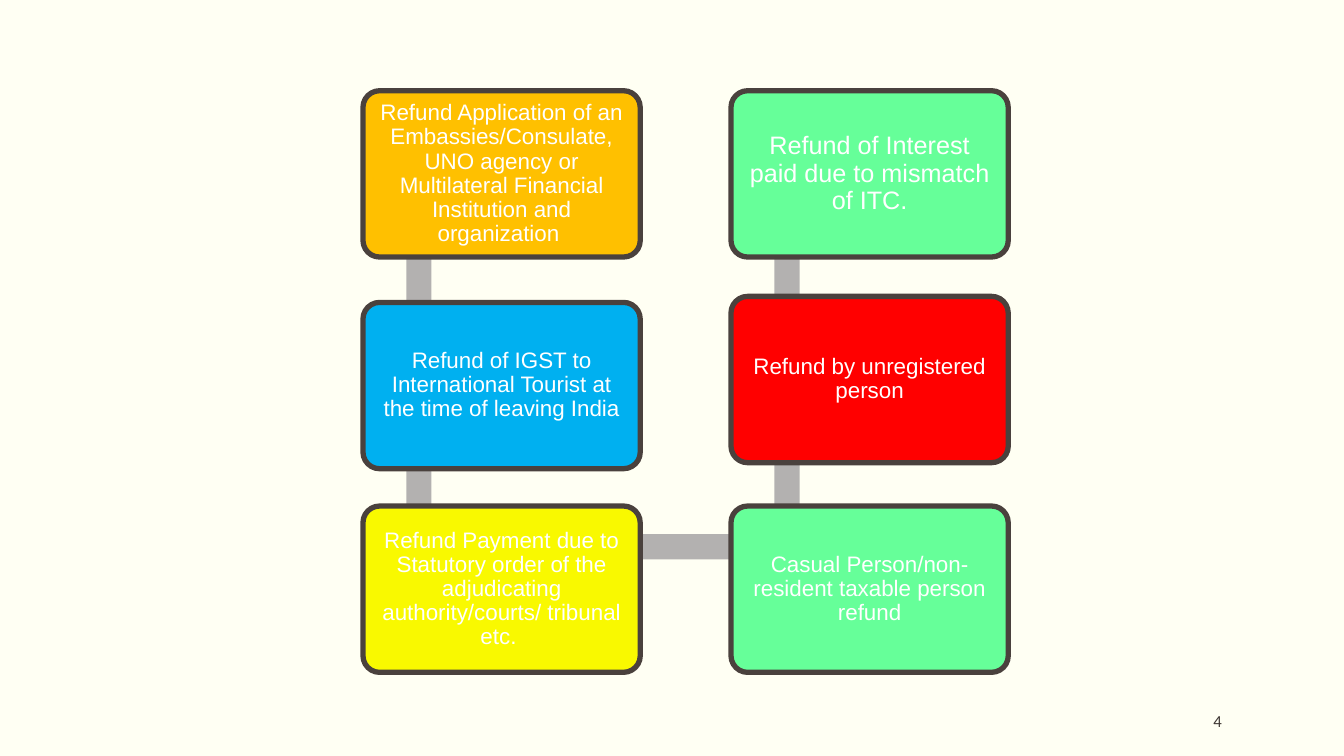
from pptx import Presentation
from pptx.dml.color import RGBColor
from pptx.enum import shapes, text
from pptx.util import Inches, Pt

BOX_WIDTH, BOX_HEIGHT = 2.75, 1.65
BAR_THICKNESS = 0.25
LEFT_COLUMN, RIGHT_COLUMN = 3.6, 7.25

# Refund cases in the order of the chain: left, top, fill, size, wording
REFUNDS = [
    (LEFT_COLUMN, 0.9, "FFC000", 16,
     "Refund Application of an Embassies/Consulate, UNO agency or "
     "Multilateral Financial Institution and organization "),
    (LEFT_COLUMN, 3.0, "00B0F0", 16,
     "Refund of IGST to International Tourist at the time of leaving India"),
    (LEFT_COLUMN, 5.02, "F9F900", 16,
     "Refund Payment due to Statutory order of the adjudicating "
     "authority/courts/ tribunal etc. "),
    (RIGHT_COLUMN, 5.02, "66FF99", 16,
     "Casual Person/non-resident taxable person refund"),
    (RIGHT_COLUMN, 2.94, "FF0000", 16, "Refund by unregistered person"),
    (RIGHT_COLUMN, 0.9, "66FF99", 18,
     "Refund of Interest paid due to mismatch of ITC."),
]


def color(value):
    return RGBColor.from_string(value)


def add_block(slide, kind, left, top, width, height, fill):
    shape = slide.shapes.add_shape(
        kind, Inches(left), Inches(top), Inches(width), Inches(height))
    shape.shadow.inherit = False
    shape.fill.solid()
    shape.fill.fore_color.rgb = color(fill)
    shape.line.fill.background()
    return shape


def write(shape, wording, size, font_name, font_color, alignment, inset_x, inset_y):
    frame = shape.text_frame
    frame.word_wrap = True
    frame.vertical_anchor = text.MSO_ANCHOR.MIDDLE
    frame.margin_left = frame.margin_right = Inches(inset_x)
    frame.margin_top = frame.margin_bottom = Inches(inset_y)
    frame.text = wording
    paragraph = frame.paragraphs[0]
    paragraph.alignment = alignment
    font = paragraph.runs[0].font
    font.size, font.name = Pt(size), font_name
    font.color.rgb = color(font_color)
    return paragraph


def add_bar(slide, start, end):
    """Bar linking two neighbouring boxes, given by their left and top."""
    if start[0] == end[0]:
        top, bottom = sorted((start[1], end[1]))
        area = (start[0] + 0.43, top + 0.41, BAR_THICKNESS, bottom - top)
    else:
        area = (start[0] + 0.55, start[1] + 0.28, end[0] - start[0], BAR_THICKNESS)
    add_block(slide, shapes.MSO_SHAPE.RECTANGLE, *area, "B3B1B0")


def add_refund(slide, left, top, fill, size, wording):
    box = add_block(slide, shapes.MSO_SHAPE.ROUNDED_RECTANGLE,
                    left, top, BOX_WIDTH, BOX_HEIGHT, fill)
    box.adjustments[0] = 0.1
    box.line.color.rgb = color("4A413D")
    box.line.width = Pt(3.78)
    paragraph = write(box, wording, size, "Arial", "FFFFFF",
                      text.PP_ALIGN.CENTER, 0.07, 0.07)
    paragraph.line_spacing = 0.9


def add_slide_number(slide, number):
    box = slide.shapes.add_textbox(Inches(10.12), Inches(6.95), Inches(2), Inches(0.4))
    write(box, number, 12, "Calibri", "3D3632", text.PP_ALIGN.RIGHT, 0, 0.05)


def main():
    presentation = Presentation()
    presentation.slide_width, presentation.slide_height = Inches(13.33), Inches(7.5)
    slide = presentation.slides.add_slide(presentation.slide_layouts[6])
    slide.background.fill.solid()
    slide.background.fill.fore_color.rgb = color("FFFFF3")

    # Bars lie behind the boxes
    for start, end in zip(REFUNDS, REFUNDS[1:]):
        add_bar(slide, start[:2], end[:2])
    for refund in REFUNDS:
        add_refund(slide, *refund)

    add_slide_number(slide, "4")
    presentation.save("out.pptx")


if __name__ == "__main__":
    main()
